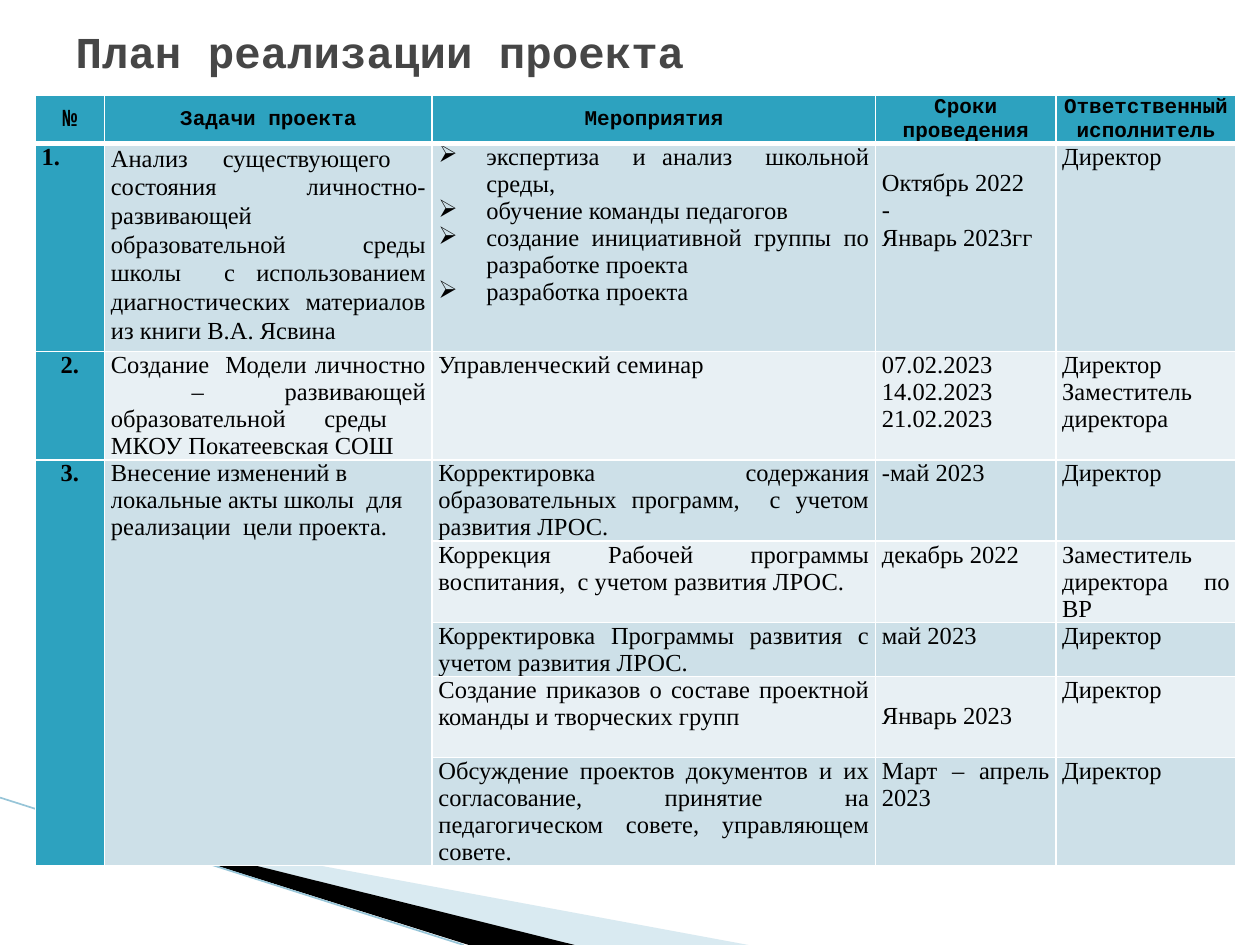
from lxml import etree
from pptx import Presentation
from pptx.dml.color import RGBColor
from pptx.enum.shapes import MSO_CONNECTOR
from pptx.enum.text import MSO_ANCHOR, MSO_AUTO_SIZE, PP_ALIGN
from pptx.oxml.ns import qn
from pptx.util import Inches, Pt

LEFT, MID, JUST = PP_ALIGN.LEFT, PP_ALIGN.CENTER, PP_ALIGN.JUSTIFY
TOP, CORE = MSO_ANCHOR.TOP, MSO_ANCHOR.MIDDLE
NONE = MSO_AUTO_SIZE.NONE
LINE = MSO_CONNECTOR.STRAIGHT

HUES = {
    "paper": "FFFFFF", "ink": "000000", "title": "464646", "head": "2DA2BF",
    "odd": "CDE0E8", "even": "E8F0F4", "wave": "A0CBDC", "edge": "97C5D8",
}
MONO, SERIF = "Courier New", "Times New Roman"
TITLE = "План реализации проекта"
COLS = [0.55, 2.6, 3.52, 1.43, 1.43]
ROWS = [0.38, 1.65, 0.86, 0.64, 0.64, 0.43, 0.64, 0.86]
HEAD = ["№", "Задачи проекта", "Мероприятия", "Сроки проведения",
        "Ответственный исполнитель"]
TASKS = {
    1: ("1.", "Анализ существующего  состояния личностно-развивающей "
        "образовательной среды школы  с использованием диагностических "
        "материалов из книги В.А. Ясвина"),
    2: ("2.", "Создание  Модели личностно  – развивающей образовательной "
        "среды  МКОУ Покатеевская СОШ"),
    3: ("3.", "Внесение изменений в локальные акты школы  для "
        "реализации  цели проекта."),
}
STEPS = [
    (["экспертиза  и анализ  школьной среды,", "обучение команды педагогов",
      "создание инициативной группы по разработке проекта",
      "разработка проекта"],
     ["Октябрь 2022", "-", "Январь 2023гг"], ["Директор"]),
    (["Управленческий семинар"],
     ["07.02.2023", "14.02.2023", "21.02.2023"],
     ["Директор", "Заместитель директора"]),
    (["Корректировка содержания образовательных программ,  с учетом "
      "развития ЛРОС."], ["-май 2023"], ["Директор"]),
    (["Коррекция Рабочей программы воспитания,  с учетом развития ЛРОС."],
     ["декабрь 2022"], ["Заместитель директора по ВР"]),
    (["Корректировка Программы развития с учетом развития ЛРОС."],
     ["май 2023"], ["Директор"]),
    (["Создание приказов о составе проектной команды и творческих групп"],
     ["Январь 2023"], ["Директор"]),
    (["Обсуждение проектов документов и их согласование, принятие на "
      "педагогическом совете, управляющем совете."],
     ["Март – апрель 2023"], ["Директор"]),
]
LATE = (1, 6)


def tint(name):
    return RGBColor.from_string(HUES[name])


def write(par, text, size, face, hue="ink", bold=False):
    run = par.add_run()
    run.text = text
    font = run.font
    font.size, font.name, font.bold = Pt(size), face, bold
    font.color.rgb = tint(hue)


def bullet(par):
    props = par._p.get_or_add_pPr()
    props.set("marL", str(Inches(0.38)))
    props.set("indent", str(Inches(-0.38)))
    etree.SubElement(props, qn("a:buChar"), char="➢")
    tabs = etree.SubElement(props, qn("a:tabLst"))
    etree.SubElement(tabs, qn("a:tab"), pos=str(Inches(0.5)), algn="l")


def border(cell, row):
    props = cell._tc.get_or_add_tcPr()
    thick = {"T": 3 if row == 1 else 1, "B": 3 if row == 0 else 1}
    for spot, side in enumerate("LRTB"):
        edge = etree.Element(qn("a:ln" + side), w=str(Pt(thick.get(side, 1))))
        fill = etree.SubElement(edge, qn("a:solidFill"))
        etree.SubElement(fill, qn("a:srgbClr"), val=HUES["paper"])
        props.insert(spot, edge)


def fill_cell(cell, lines, align=JUST, size=14, face=SERIF, bold=False,
              marks=False, gap=None):
    frame = cell.text_frame
    for i, line in enumerate(lines):
        par = frame.add_paragraph() if i else frame.paragraphs[0]
        if marks:
            bullet(par)
        par.alignment = align
        if gap:
            par.line_spacing = gap
        write(par, line, size, face, bold=bold)


def add_wave(slide, x, y, w, h):
    bands = [
        ("wave", [(0, 0), (w, h), (4.01, h)]),
        ("ink", [(0, 0), (4.02, h), (3.18, h)]),
    ]
    for hue, spots in bands:
        pts = [(Inches(x + a), Inches(y + b)) for a, b in spots]
        maker = slide.shapes.build_freeform(*pts[0])
        maker.add_line_segments(pts[1:], close=True)
        band = maker.convert_to_shape()
        band.shadow.inherit = False
        band.fill.solid()
        band.fill.fore_color.rgb = tint(hue)
        band.line.fill.background()
        if hue == "wave":
            tone = band._element.spPr.find(".//" + qn("a:srgbClr"))
            etree.SubElement(tone, qn("a:alpha"), val="40000")
    rim = slide.shapes.add_connector(
        LINE, Inches(0), Inches(6.33), Inches(3.68), Inches(y + h))
    rim.line.color.rgb = tint("edge")
    rim.line.width = Pt(0.95)
    etree.SubElement(rim._element.spPr, qn("a:effectLst"))


def add_title(slide, x, y, w, h):
    title = slide.shapes.title
    title.left, title.top = Inches(x), Inches(y)
    title.width, title.height = Inches(w), Inches(h)
    frame = title.text_frame
    frame.word_wrap = True
    frame.auto_size = NONE
    frame.vertical_anchor = CORE
    par = frame.paragraphs[0]
    par.alignment = LEFT
    write(par, TITLE, 25.2, MONO, "title", True)


def add_plan(slide, x, y, w, h):
    plan = slide.shapes.add_table(
        len(ROWS), len(COLS), Inches(x), Inches(y), Inches(w), Inches(h)).table
    plan.horz_banding = False
    for col, size in zip(plan.columns, COLS):
        col.width = Inches(size)
    for row, size in zip(plan.rows, ROWS):
        row.height = Inches(size)
    for r in range(len(ROWS)):
        for c in range(len(COLS)):
            cell = plan.cell(r, c)
            hue = "head" if r * c == 0 else "odd" if r % 2 else "even"
            cell.fill.solid()
            cell.fill.fore_color.rgb = tint(hue)
            border(cell, r)
            cell.margin_left = cell.margin_right = Inches(0.05)
            late = r in LATE and c == 3
            cell.margin_top = Inches(0.21 if late else 0)
            cell.margin_bottom = Inches(0)
            cell.vertical_anchor = TOP if r else CORE
    for c in (0, 1):
        plan.cell(3, c).merge(plan.cell(len(ROWS) - 1, c))
    for c, text in enumerate(HEAD):
        fill_cell(plan.cell(0, c), [text], MID, 12 if c else 14, MONO, True)
    for r, (num, task) in TASKS.items():
        fill_cell(plan.cell(r, 0), [num], LEFT if r == 1 else MID, bold=True)
        fill_cell(plan.cell(r, 1), [task], LEFT if r == 3 else JUST,
                  gap=1.06 if r == 1 else None)
    for r, step in enumerate(STEPS, 1):
        for c, lines in enumerate(step, 2):
            fill_cell(plan.cell(r, c), lines, marks=(r, c) == (1, 2))


def main():
    deck = Presentation()
    deck.slide_width, deck.slide_height = Inches(10), Inches(7.5)
    slide = deck.slides.add_slide(deck.slide_layouts[5])
    slide.background.fill.solid()
    slide.background.fill.fore_color.rgb = tint("paper")
    add_wave(slide, 0.54, 6.5, 5.4, 1)
    add_plan(slide, 0.28, 0.76, sum(COLS), sum(ROWS))
    add_title(slide, 0.5, 0.13, 9, 0.55)
    deck.save("out.pptx")


if __name__ == "__main__":
    main()
